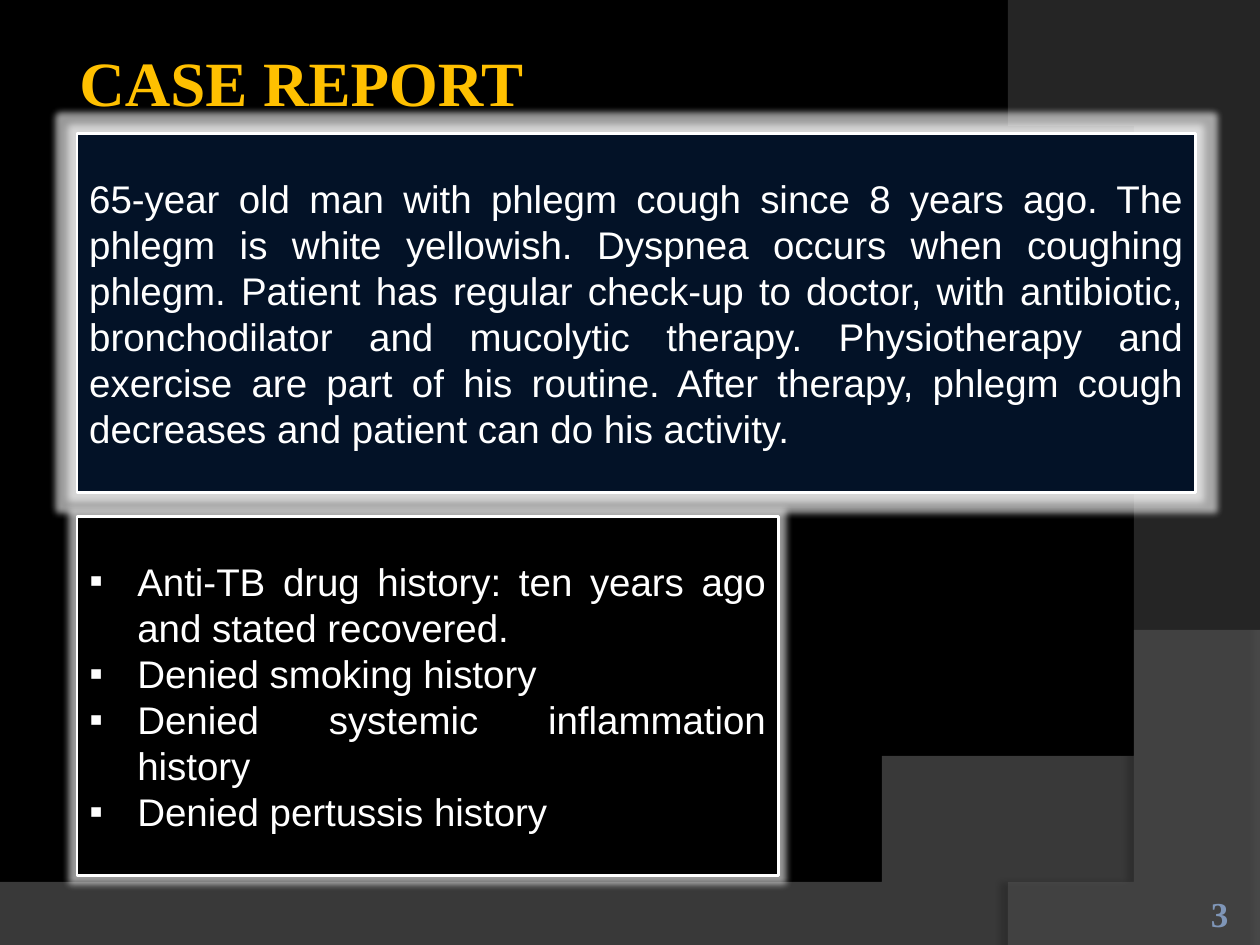
from dataclasses import dataclass

from lxml.etree import SubElement
from pptx import Presentation
from pptx.dml.color import RGBColor
from pptx.enum.shapes import MSO_SHAPE
from pptx.enum.text import MSO_ANCHOR, MSO_AUTO_SIZE, PP_ALIGN
from pptx.oxml.ns import qn
from pptx.util import Inches, Pt


@dataclass(frozen=True)
class Theme:
    background: str = "000000"
    lower_sweep: str = "7F7F7F"
    right_sweep: str = "5E5E5E"
    shadow: str = "000000"
    title: str = "FFC000"
    page_number: str = "7F96B8"
    story_fill: str = "031227"
    history_fill: str = "000000"
    light: str = "FFFFFF"
    heading_font: str = "Times New Roman"
    body_font: str = "Arial"
    title_size: int = 36
    body_size: int = 22
    number_size: int = 20


THEME = Theme()

STORY = (
    "65-year old man with phlegm cough since 8 years ago. The phlegm is white "
    "yellowish. Dyspnea occurs when coughing phlegm. Patient has regular check-up "
    "to doctor, with antibiotic, bronchodilator and mucolytic therapy. "
    "Physiotherapy and exercise are part of his routine. After therapy, phlegm "
    "cough decreases and patient can do his activity."
)
HISTORY = (
    "Anti-TB drug history: ten years ago and stated recovered.",
    "Denied smoking history",
    "Denied systemic inflammation history",
    "Denied pertussis history",
)


def rgb(color):
    return RGBColor.from_string(color)


def place(shape, box):
    shape.left, shape.top, shape.width, shape.height = map(Inches, box)


def format_text(frame, font, size, color, bold=False, align=PP_ALIGN.LEFT):
    for paragraph in frame.paragraphs:
        paragraph.alignment = align
        paragraph.space_before = Pt(0)
        for run in paragraph.runs:
            run.font.name = font
            run.font.size = Pt(size)
            run.font.bold = bold
            run.font.color.rgb = rgb(color)


def set_margins(frame, inset):
    frame.margin_left = frame.margin_right = Inches(inset)
    frame.margin_top = frame.margin_bottom = Inches(inset)


def add_alpha(color_element, percent):
    SubElement(color_element, qn("a:alpha"), val=str(percent * 1000))


def add_effect(shape, kind, color, alpha, **settings):
    """Give the shape one effect, such as a glow or an outer shadow."""
    shape.shadow.inherit = False
    effects = shape._element.spPr.find(qn("a:effectLst"))
    effect = SubElement(effects, qn(f"a:{kind}"),
                        {name: str(value) for name, value in settings.items()})
    add_alpha(SubElement(effect, qn("a:srgbClr"), val=color), alpha)


def bezier(start, control_1, control_2, end, steps=48):
    """Return points along a cubic curve, both ends included."""
    points = []
    for step in range(steps + 1):
        t = step / steps
        weights = ((1 - t) ** 3, 3 * t * (1 - t) ** 2, 3 * t ** 2 * (1 - t), t ** 3)
        points.append(tuple(
            sum(weight * value for weight, value in zip(weights, axis))
            for axis in zip(start, control_1, control_2, end)))
    return points


def add_sweep(slide, points, color, alpha, shadow_alpha, shadow_distance, direction):
    """Draw a translucent curved area behind everything placed so far."""
    builder = slide.shapes.build_freeform(*points[0], scale=Inches(1))
    builder.add_line_segments(points[1:], close=True)
    sweep = builder.convert_to_shape()
    sweep.fill.solid()
    sweep.fill.fore_color.rgb = rgb(color)
    add_alpha(sweep._element.spPr.find(".//" + qn("a:srgbClr")), alpha)
    sweep.line.fill.background()
    add_effect(sweep, "outerShdw", THEME.shadow, shadow_alpha, blurRad=Pt(4),
               dist=Pt(shadow_distance), dir=direction * 60000)
    slide.shapes._spTree.insert(2, sweep._element)


def add_backdrop(slide, box):
    left, top, width, height = box
    right, bottom = left + width, top + height
    right_edge = bezier((right - 1.79, bottom), (right - 0.65, bottom - 1.31),
                        (right + 0.18, top + 3), (right - 2, top))
    add_sweep(slide, [(right, top + 0.02), (right, bottom), *right_edge],
              THEME.right_sweep, 40, 45, 4, 180)
    lower_edge = bezier((right, bottom - 2.3), (left + 5.59, bottom - 0.21),
                        (left + 3.91, bottom - 0.31), (left, bottom - 0.45))
    add_sweep(slide, [(left, bottom), (right, bottom), *lower_edge],
              THEME.lower_sweep, 45, 35, 3.5, 270)


def fill_title(title, box):
    place(title, box)
    frame = title.text_frame
    frame.text = "CASE REPORT"
    frame.auto_size = MSO_AUTO_SIZE.NONE
    frame.vertical_anchor = MSO_ANCHOR.MIDDLE
    set_margins(frame, 0.05)
    format_text(frame, THEME.heading_font, THEME.title_size, THEME.title, bold=True)


def add_page_number(slide, box):
    frame = slide.shapes.add_textbox(*map(Inches, box)).text_frame
    frame.word_wrap = True
    frame.text = "3"
    frame.vertical_anchor = MSO_ANCHOR.BOTTOM
    set_margins(frame, 0)
    format_text(frame, THEME.heading_font, THEME.number_size, THEME.page_number,
                bold=True, align=PP_ALIGN.RIGHT)


def style_panel(panel, fill, text):
    """Format a glowing, white-edged panel of justified text."""
    panel.fill.solid()
    panel.fill.fore_color.rgb = rgb(fill)
    panel.line.color.rgb = rgb(THEME.light)
    panel.line.width = Pt(1.5)
    add_effect(panel, "glow", THEME.light, 60, rad=Pt(8))
    frame = panel.text_frame
    frame.text = text
    frame.word_wrap = True
    frame.auto_size = MSO_AUTO_SIZE.NONE
    frame.vertical_anchor = MSO_ANCHOR.MIDDLE
    format_text(frame, THEME.body_font, THEME.body_size, THEME.light,
                align=PP_ALIGN.JUSTIFY)


def add_story(slide, box):
    panel = slide.shapes.add_shape(MSO_SHAPE.RECTANGLE, *map(Inches, box))
    style_panel(panel, THEME.story_fill, STORY)


def fill_history(panel, box):
    place(panel, box)
    style_panel(panel, THEME.history_fill, "\n".join(HISTORY))
    indent = Inches(0.38)
    for paragraph in panel.text_frame.paragraphs:
        properties = paragraph._p.get_or_add_pPr()
        properties.set("marL", str(indent))
        properties.set("indent", str(-indent))
        SubElement(properties, qn("a:buFont"), typeface=THEME.body_font)
        SubElement(properties, qn("a:buChar"), char="▪")


def build_case_report(presentation):
    slide = presentation.slides.add_slide(presentation.slide_layouts[1])
    slide.background.fill.solid()
    slide.background.fill.fore_color.rgb = rgb(THEME.background)
    add_backdrop(slide, (0, 0, 10, 7.5))
    fill_title(slide.shapes.title, (0.58, 0.29, 8.17, 0.71))
    add_page_number(slide, (8.92, 7.02, 0.83, 0.4))
    add_story(slide, (0.61, 1.06, 8.88, 2.85))
    fill_history(slide.placeholders[1], (0.61, 4.1, 5.57, 2.85))


def main():
    presentation = Presentation()
    presentation.slide_width = Inches(10)
    presentation.slide_height = Inches(7.5)
    build_case_report(presentation)
    presentation.save("out.pptx")


if __name__ == "__main__":
    main()
